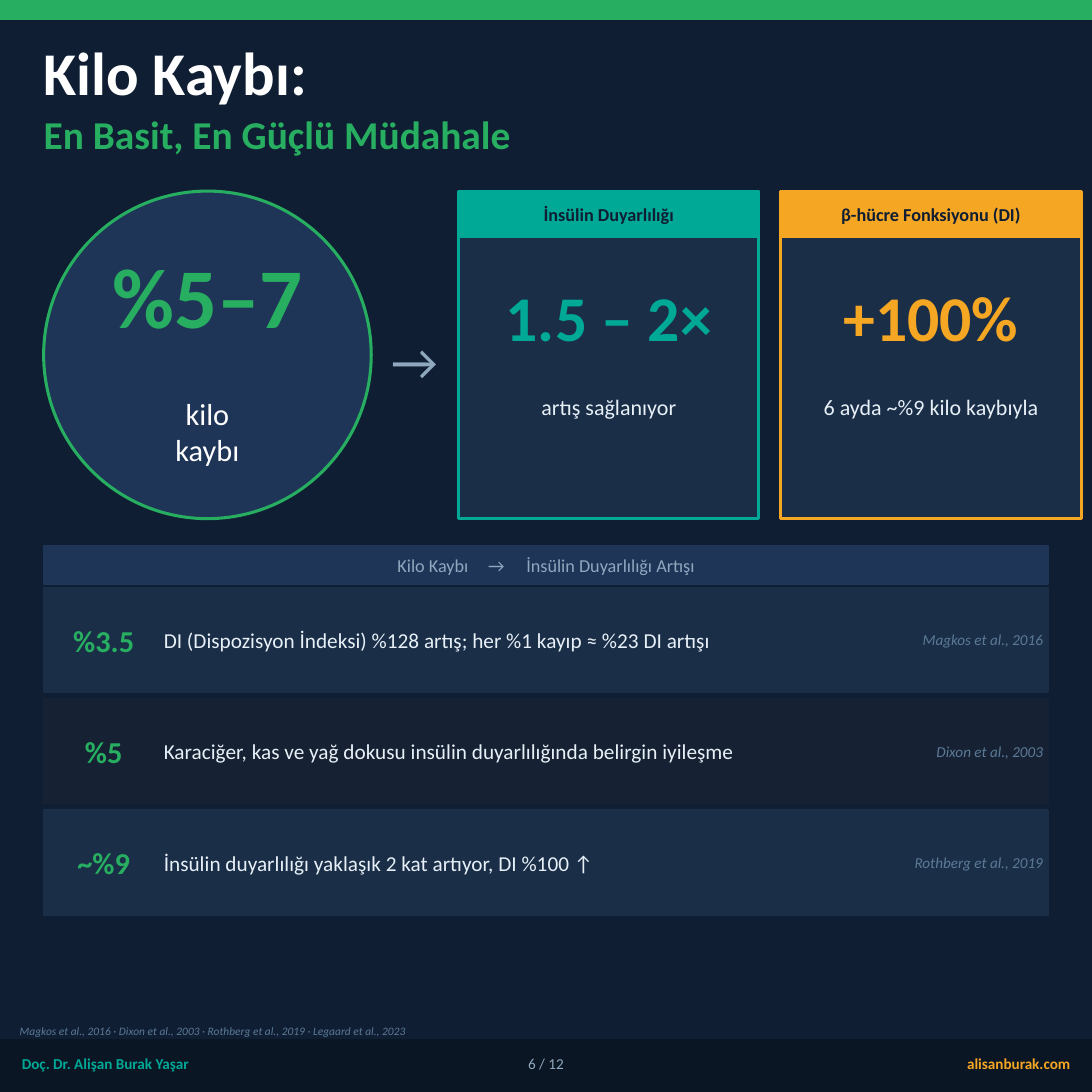
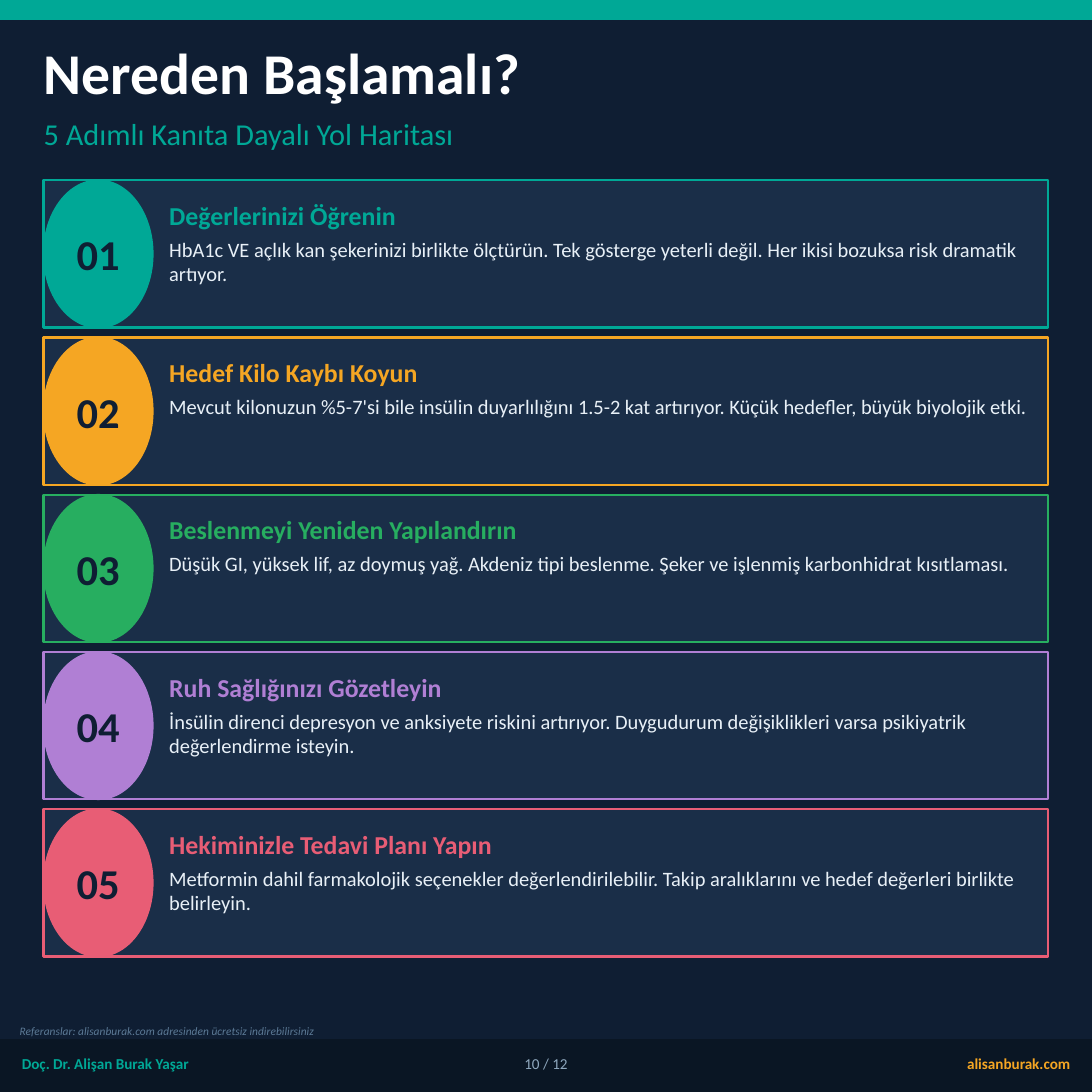
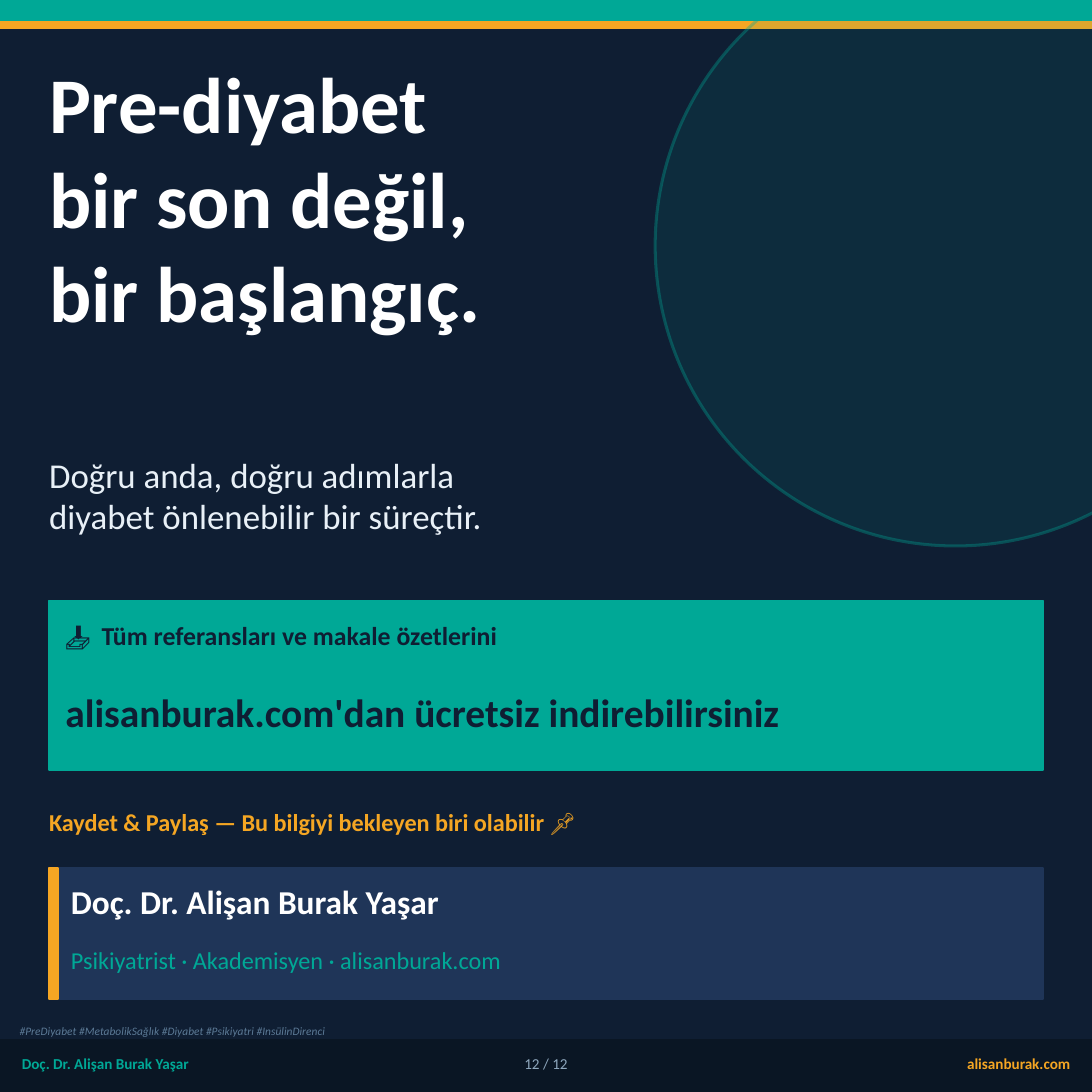
from dataclasses import dataclass

from lxml.etree import SubElement
from pptx import Presentation
from pptx.dml.color import RGBColor
from pptx.enum.shapes import MSO_SHAPE
from pptx.enum.text import MSO_ANCHOR, PP_ALIGN
from pptx.oxml.ns import qn
from pptx.util import Inches, Pt


@dataclass(frozen=True)
class Theme:
    font: str = "Calibri"
    # Colours
    background: str = "0F1E33"
    footer: str = "0A1624"
    card: str = "1A2E48"
    card_dark: str = "162233"
    panel: str = "1F3558"
    white: str = "FFFFFF"
    body: str = "E8F0F7"
    muted: str = "8FA8BE"
    faint: str = "5C7A96"
    teal: str = "00A896"
    amber: str = "F5A623"
    green: str = "27AE60"
    purple: str = "B07FD4"
    rose: str = "E85D75"
    # Type sizes
    hero: float = 56
    closing: float = 52
    figure: float = 42
    title: float = 40
    title_small: float = 38
    arrow: float = 34
    number: float = 28
    subtitle: float = 26
    lead: float = 23
    name: float = 22
    medium: float = 20
    heading: float = 17
    action: float = 16
    caption: float = 14.5
    row: float = 14
    step: float = 13.5
    label: float = 12
    small: float = 10
    reference: float = 7.5


theme = Theme()
LEFT, CENTER, RIGHT = PP_ALIGN.LEFT, PP_ALIGN.CENTER, PP_ALIGN.RIGHT
RECT, OVAL = MSO_SHAPE.RECTANGLE, MSO_SHAPE.OVAL


def add_block(page, kind, left, top, width, height, fill, line=None, weight=1):
    shape = page.shapes.add_shape(
        kind, Inches(left), Inches(top), Inches(width), Inches(height))
    shape.shadow.inherit = False
    shape.fill.solid()
    shape.fill.fore_color.rgb = RGBColor.from_string(fill)
    shape.line.color.rgb = RGBColor.from_string(line or fill)
    shape.line.width = Pt(weight)
    return shape


def add_text(page, left, top, width, height, lines, size, color, bold=False,
             italic=False, align=LEFT, anchor=MSO_ANCHOR.MIDDLE, tabs=()):
    box = page.shapes.add_textbox(
        Inches(left), Inches(top), Inches(width), Inches(height))
    frame = box.text_frame
    frame.word_wrap = True
    frame.vertical_anchor = anchor
    frame.margin_left = frame.margin_right = 0
    frame.margin_top = frame.margin_bottom = 0
    for index, line in enumerate(lines.split("\n")):
        para = frame.add_paragraph() if index else frame.paragraphs[0]
        para.alignment = align
        if tabs:
            stops = SubElement(para._p.get_or_add_pPr(), qn("a:tabLst"))
            for stop in tabs:
                SubElement(stops, qn("a:tab"), pos=str(Inches(stop)), algn="l")
        span = para.add_run()
        span.text = line
        span.font.name = theme.font
        span.font.size = Pt(size)
        span.font.bold = bold
        span.font.italic = italic
        span.font.color.rgb = RGBColor.from_string(color)


deck = Presentation()
deck.slide_width = deck.slide_height = Inches(10)
author, site = "Doç. Dr. Alişan Burak Yaşar", "alisanburak.com"

# Shared parts: background, top band, footer
pages = []
for number, band_color, band_height, reference in [
    (6, theme.green, 0.18,
     "Magkos et al., 2016 · Dixon et al., 2003 · Rothberg et al., 2019 · Legaard et al., 2023"),
    (10, theme.teal, 0.18,
     "Referanslar: alisanburak.com adresinden ücretsiz indirebilirsiniz"),
    (12, theme.teal, 0.2,
     "#PreDiyabet #MetabolikSağlık #Diyabet #Psikiyatri #InsülinDirenci"),
]:
    page = deck.slides.add_slide(deck.slide_layouts[6])
    page.background.fill.solid()
    page.background.fill.fore_color.rgb = RGBColor.from_string(theme.background)
    add_block(page, RECT, 0, 0, 10, band_height, band_color)
    add_block(page, RECT, 0, 9.52, 10, 0.48, theme.footer)
    add_text(page, 0.2, 9.54, 4, 0.4, author, theme.small, theme.teal, bold=True)
    add_text(page, 0.18, 9.34, 9.6, 0.2, reference, theme.reference, theme.faint,
             italic=True)
    add_text(page, 6.5, 9.54, 3.3, 0.4, site, theme.small, theme.amber,
             bold=True, align=RIGHT)
    add_text(page, 4.3, 9.54, 1.4, 0.4, f"{number} / 12", theme.small, theme.muted,
             align=CENTER)
    pages.append(page)
weight_page, steps_page, closing_page = pages

# Weight loss: title
add_text(weight_page, 0.4, 0.3, 9.2, 0.7, "Kilo Kaybı:", theme.title, theme.white,
         bold=True)
add_text(weight_page, 0.4, 0.95, 9.2, 0.55, "En Basit, En Güçlü Müdahale",
         theme.subtitle, theme.green, bold=True)

# Weight loss: circle and arrow
add_block(weight_page, OVAL, 0.4, 1.75, 3, 3, theme.panel, theme.green, 2)
add_text(weight_page, 0.4, 1.9, 3, 1.6, "%5–7", theme.hero, theme.green,
         bold=True, align=CENTER)
add_text(weight_page, 0.4, 3.5, 3, 0.9, "kilo\nkaybı", theme.medium, theme.white,
         align=CENTER)
add_text(weight_page, 3.5, 2.7, 0.6, 1.2, "→", theme.arrow, theme.muted,
         align=CENTER)

# Weight loss: result cards
cards = [
    ("İnsülin Duyarlılığı", "1.5 – 2×", "artış sağlanıyor", theme.teal),
    ("β-hücre Fonksiyonu (DI)", "+100%", "6 ayda ~%9 kilo kaybıyla", theme.amber),
]
for index, (heading, figure, caption, color) in enumerate(cards):
    left = 4.2 + index * 2.95
    add_block(weight_page, RECT, left, 1.75, 2.75, 3, theme.card, color, 2)
    add_block(weight_page, RECT, left, 1.75, 2.75, 0.42, color)
    add_text(weight_page, left, 1.75, 2.75, 0.42, heading, theme.label,
             theme.background, bold=True, align=CENTER)
    add_text(weight_page, left, 2.22, 2.75, 1.35, figure, theme.figure, color,
             bold=True, align=CENTER)
    add_text(weight_page, left + 0.1, 3.6, 2.55, 1.1, caption, theme.caption,
             theme.body, align=CENTER, anchor=MSO_ANCHOR.TOP)

# Weight loss: evidence rows
add_block(weight_page, RECT, 0.4, 5, 9.2, 0.35, theme.panel)
add_text(weight_page, 3.64, 5, 5.96, 0.35, "Kilo Kaybı\t→\tİnsülin Duyarlılığı Artışı",
         theme.label, theme.muted, tabs=(0.83, 1.18))
evidence = [
    ("%3.5", "DI (Dispozisyon İndeksi) %128 artış; her %1 kayıp ≈ %23 DI artışı",
     "Magkos et al., 2016", theme.card),
    ("%5", "Karaciğer, kas ve yağ dokusu insülin duyarlılığında belirgin iyileşme",
     "Dixon et al., 2003", theme.card_dark),
    ("~%9", "İnsülin duyarlılığı yaklaşık 2 kat artıyor, DI %100 ↑",
     "Rothberg et al., 2019", theme.card),
]
for index, (loss, finding, source, fill) in enumerate(evidence):
    top = 5.38 + index * 1.02
    add_block(weight_page, RECT, 0.4, top, 9.2, 0.96, fill)
    add_text(weight_page, 0.5, top, 0.9, 0.96, loss, theme.medium, theme.green,
             bold=True, align=CENTER)
    add_text(weight_page, 1.5, top, 6.1, 0.96, finding, theme.row, theme.body)
    add_text(weight_page, 7.7, top, 1.85, 0.96, source, theme.small, theme.faint,
             italic=True, align=RIGHT)

# Steps: title
add_text(steps_page, 0.4, 0.3, 9.2, 0.7, "Nereden Başlamalı?", theme.title_small,
         theme.white, bold=True)
add_text(steps_page, 0.4, 1, 9.2, 0.45, "5 Adımlı Kanıta Dayalı Yol Haritası",
         theme.medium, theme.teal)

# Steps: numbered cards
steps = [
    ("Değerlerinizi Öğrenin", theme.teal,
     "HbA1c VE açlık kan şekerinizi birlikte ölçtürün. Tek gösterge yeterli değil. "
     "Her ikisi bozuksa risk dramatik artıyor."),
    ("Hedef Kilo Kaybı Koyun", theme.amber,
     "Mevcut kilonuzun %5-7'si bile insülin duyarlılığını 1.5-2 kat artırıyor. "
     "Küçük hedefler, büyük biyolojik etki."),
    ("Beslenmeyi Yeniden Yapılandırın", theme.green,
     "Düşük GI, yüksek lif, az doymuş yağ. Akdeniz tipi beslenme. "
     "Şeker ve işlenmiş karbonhidrat kısıtlaması."),
    ("Ruh Sağlığınızı Gözetleyin", theme.purple,
     "İnsülin direnci depresyon ve anksiyete riskini artırıyor. "
     "Duygudurum değişiklikleri varsa psikiyatrik değerlendirme isteyin."),
    ("Hekiminizle Tedavi Planı Yapın", theme.rose,
     "Metformin dahil farmakolojik seçenekler değerlendirilebilir. "
     "Takip aralıklarını ve hedef değerleri birlikte belirleyin."),
]
for index, (heading, color, advice) in enumerate(steps):
    top = 1.65 + index * 1.44
    add_block(steps_page, RECT, 0.4, top, 9.2, 1.35, theme.card, color, 1.5)
    add_block(steps_page, OVAL, 0.4, top, 1, 1.35, color)
    add_text(steps_page, 0.4, top, 1, 1.35, f"{index + 1:02}", theme.number,
             theme.background, bold=True, align=CENTER)
    add_text(steps_page, 1.55, top + 0.12, 7.9, 0.4, heading, theme.heading, color,
             bold=True)
    add_text(steps_page, 1.55, top + 0.52, 7.9, 0.78, advice, theme.step, theme.body,
             anchor=MSO_ANCHOR.TOP)

# Closing: second band and translucent circle
add_block(closing_page, RECT, 0, 0.2, 10, 0.06, theme.amber)
circle = add_block(closing_page, OVAL, 6, -0.5, 5.5, 5.5, theme.teal, weight=2)
fill_and_line = circle._element.spPr.iter(qn("a:srgbClr"))
for color, opacity in zip(fill_and_line, (10, 35)):
    SubElement(color, qn("a:alpha"), val=str(opacity * 1000))

# Closing: message
add_text(closing_page, 0.45, 0.5, 8.5, 3.5,
         "Pre-diyabet\nbir son değil,\nbir başlangıç.", theme.closing, theme.white,
         bold=True, anchor=MSO_ANCHOR.TOP)
add_text(closing_page, 0.45, 4.15, 7.5, 1.15,
         "Doğru anda, doğru adımlarla\ndiyabet önlenebilir bir süreçtir.",
         theme.lead, theme.body, anchor=MSO_ANCHOR.TOP)

# Closing: download panel and call to share
add_block(closing_page, RECT, 0.45, 5.5, 9.1, 1.55, theme.teal)
add_text(closing_page, 0.6, 5.57, 8.8, 0.5,
         "📥\tTüm referansları ve makale özetlerini", theme.heading,
         theme.background, bold=True, tabs=(0.33,))
add_text(closing_page, 0.6, 6.07, 8.8, 0.9, f"{site}'dan ücretsiz indirebilirsiniz",
         theme.subtitle, theme.background, bold=True)
add_text(closing_page, 0.45, 7.25, 9.1, 0.55,
         "Kaydet & Paylaş — Bu bilgiyi bekleyen biri olabilir 📌", theme.action,
         theme.amber, bold=True)

# Closing: author card
add_block(closing_page, RECT, 0.45, 7.95, 9.1, 1.2, theme.panel)
add_block(closing_page, RECT, 0.45, 7.95, 0.08, 1.2, theme.amber)
add_text(closing_page, 0.65, 8, 8.7, 0.5, author, theme.name, theme.white, bold=True)
add_text(closing_page, 0.65, 8.5, 8.7, 0.58, f"Psikiyatrist · Akademisyen · {site}",
         theme.action, theme.teal)

deck.save("out.pptx")
